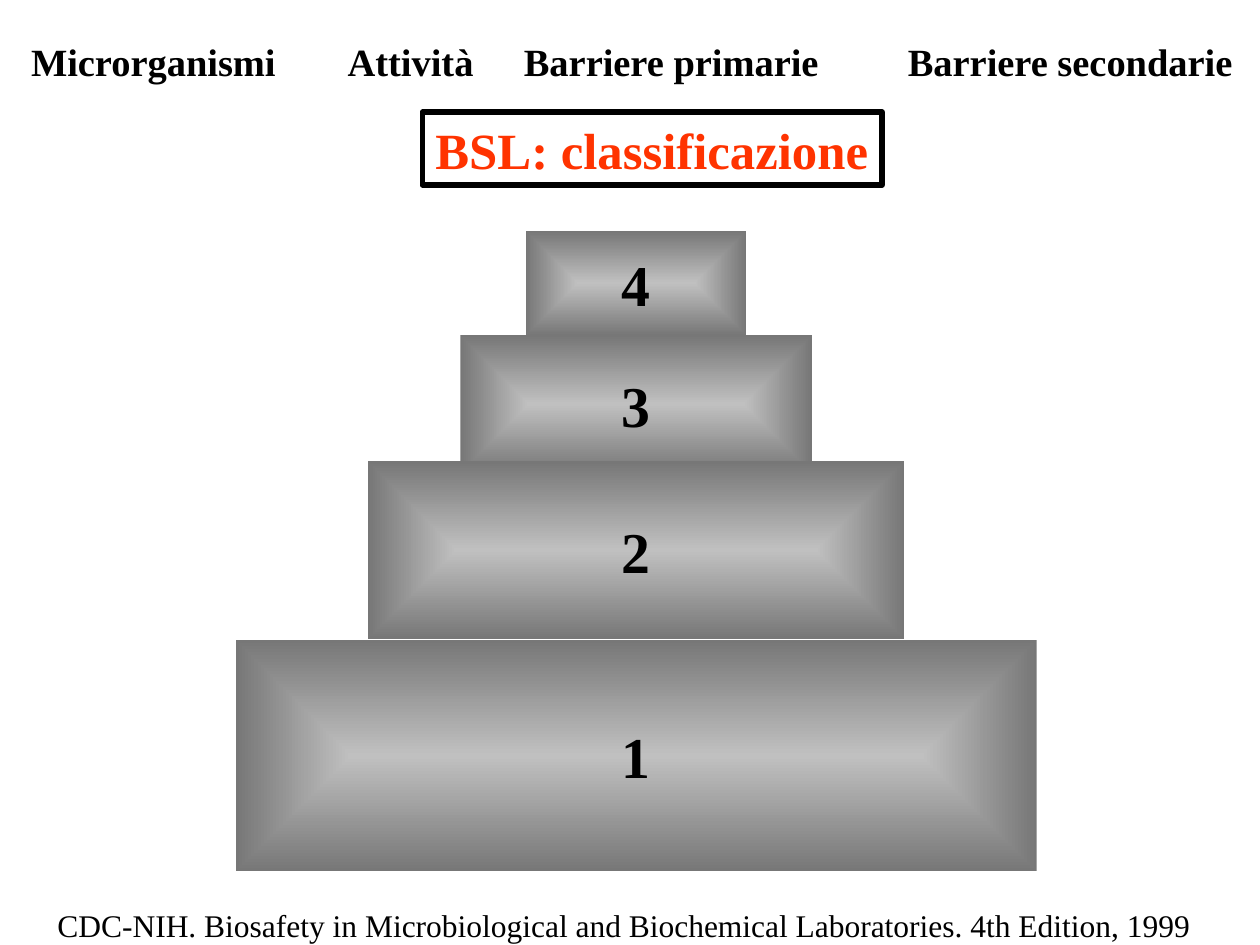
import dataclasses

import lxml.etree
import pptx
import pptx.dml.color
import pptx.enum.shapes
import pptx.enum.text
import pptx.oxml.ns
import pptx.util

Cm = pptx.util.Cm
Pt = pptx.util.Pt
RGBColor = pptx.dml.color.RGBColor
MSO_ANCHOR = pptx.enum.text.MSO_ANCHOR


@dataclasses.dataclass(frozen=True)
class Theme:
    """Colours, font and type sizes of the slide."""

    font: str = "Times New Roman"
    ink: RGBColor = RGBColor(0x00, 0x00, 0x00)
    accent: RGBColor = RGBColor(0xFF, 0x33, 0x00)
    step_centre: RGBColor = RGBColor(0xC0, 0xC0, 0xC0)
    step_edge: RGBColor = RGBColor(0x77, 0x77, 0x77)
    heading_size: int = 22
    title_size: int = 29
    step_size: int = 33
    source_size: int = 18
    border: int = 3


THEME = Theme()
HEADINGS = [
    ("Microrganismi ", 0, 5.66),
    ("Attività ", 6.4, 3.23),
    ("Barriere primarie ", 9.93, 6.68),
    ("Barriere secondarie", 17.67, 7.09),
]
STEPS = [
    ("4", 0, 4.45, 2.11),
    ("3", 2.11, 7.09, 2.77),
    ("2", 4.65, 10.82, 3.58),
    ("1", 8.25, 16.15, 4.67),
]


def write_text(shape, text, size, color, bold=True, anchor=MSO_ANCHOR.TOP):
    """Write one centred, unwrapped line into a shape."""
    frame = shape.text_frame
    frame.text = text
    frame.word_wrap = False
    frame.auto_size = pptx.enum.text.MSO_AUTO_SIZE.NONE
    frame.vertical_anchor = anchor
    paragraph = frame.paragraphs[0]
    paragraph.alignment = pptx.enum.text.PP_ALIGN.CENTER
    paragraph.font.name = THEME.font
    paragraph.font.size = Pt(size)
    paragraph.font.bold = bold
    paragraph.font.color.rgb = color


def fill_from_centre(shape):
    """Fill a shape with a gradient that runs from its centre to its edges."""
    shape.fill.gradient()
    for stop, color in zip(shape.fill.gradient_stops, (THEME.step_centre, THEME.step_edge)):
        stop.color.rgb = color
    linear = next(shape.element.iter(pptx.oxml.ns.qn("a:lin")))
    centred = lxml.etree.Element(pptx.oxml.ns.qn("a:path"), path="shape")
    lxml.etree.SubElement(
        centred, pptx.oxml.ns.qn("a:fillToRect"), l="50000", t="50000", r="50000", b="50000"
    )
    linear.getparent().replace(linear, centred)


def add_headings(slide, left, top, height):
    """Place the row of column headings."""
    for text, offset, width in HEADINGS:
        box = slide.shapes.add_textbox(Cm(left + offset), Cm(top), Cm(width), Cm(height))
        write_text(box, text, THEME.heading_size, THEME.ink)


def place_title(slide, left, top, width, height):
    """Place the framed title."""
    title = slide.shapes.title
    title.left, title.top, title.width, title.height = map(Cm, (left, top, width, height))
    title.line.color.rgb = THEME.ink
    title.line.width = Pt(THEME.border)
    write_text(title, "BSL: classificazione", THEME.title_size, THEME.accent)


def add_pyramid(slide, left, top, width):
    """Stack the biosafety levels, centred in the given width."""
    for level, offset, step_width, height in STEPS:
        step = slide.shapes.add_shape(
            pptx.enum.shapes.MSO_SHAPE.RECTANGLE,
            Cm(left + (width - step_width) / 2),
            Cm(top + offset),
            Cm(step_width),
            Cm(height),
        )
        step.shadow.inherit = False
        step.line.fill.background()
        fill_from_centre(step)
        write_text(step, level, THEME.step_size, THEME.ink, anchor=MSO_ANCHOR.MIDDLE)


def add_source(slide, left, top, width, height):
    """Place the source line at the foot of the slide."""
    box = slide.shapes.add_textbox(Cm(left), Cm(top), Cm(width), Cm(height))
    text = "CDC-NIH. Biosafety in Microbiological and Biochemical Laboratories. 4th Edition, 1999"
    write_text(box, text, THEME.source_size, THEME.ink, bold=False)


def main():
    """Build and save the presentation."""
    presentation = pptx.Presentation()
    presentation.slide_width = Cm(25.4)
    presentation.slide_height = Cm(19.05)
    slide = presentation.slides.add_slide(presentation.slide_layouts.get_by_name("Title Only"))
    place_title(slide, 8.51, 2.26, 9.27, 1.47)
    add_headings(slide, 0.36, 0.64, 1.17)
    add_pyramid(slide, 4.75, 4.65, 16.15)
    add_source(slide, 0.81, 18.14, 23.55, 0.99)
    presentation.save("out.pptx")


if __name__ == "__main__":
    main()
